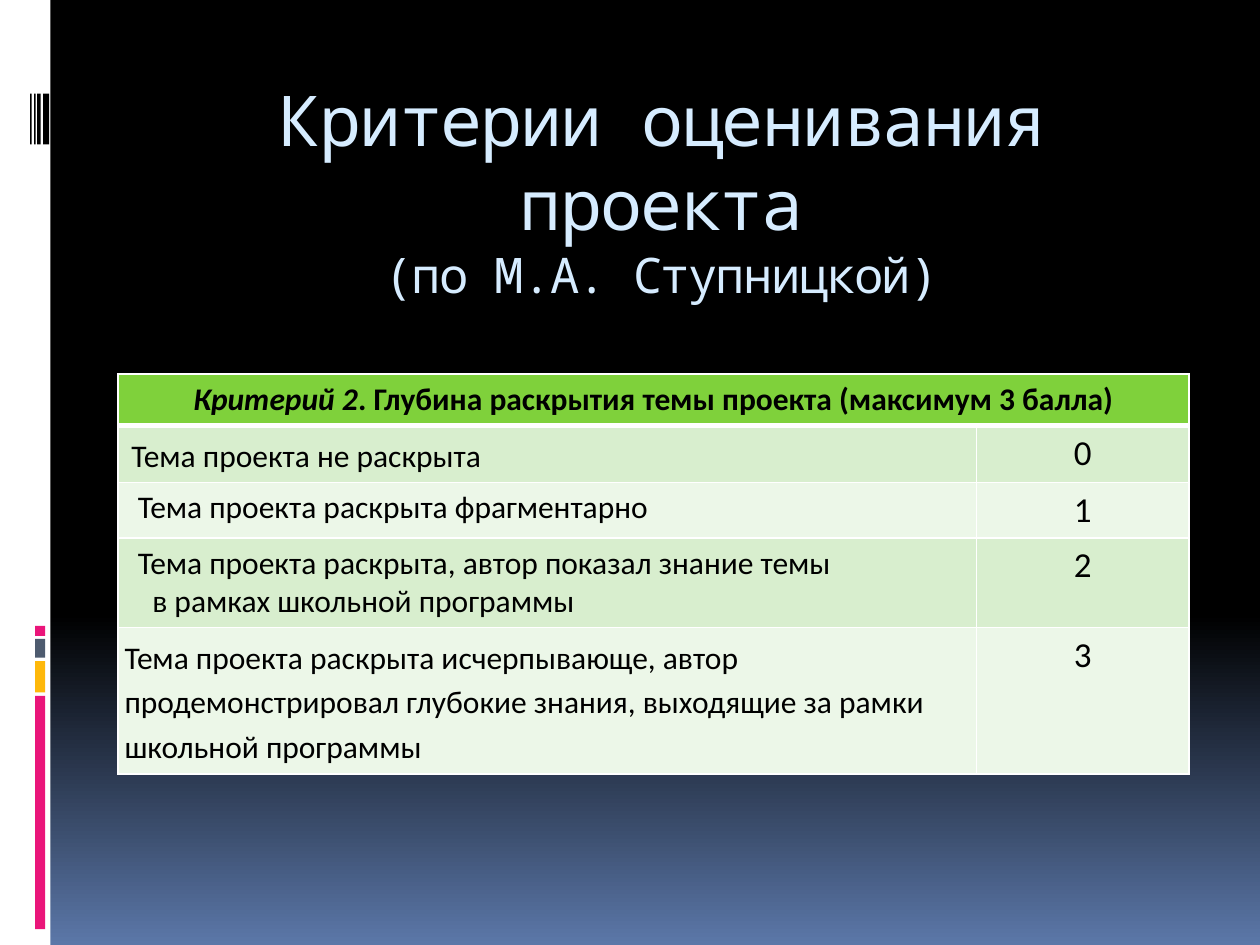
from lxml.etree import SubElement
from pptx import Presentation
from pptx.dml.color import RGBColor
from pptx.enum.shapes import MSO_SHAPE
from pptx.enum.text import MSO_ANCHOR, MSO_AUTO_SIZE, PP_ALIGN
from pptx.oxml.ns import qn
from pptx.util import Cm, Pt

THEME = {
    "white": "FFFFFF", "black": "000000", "pink": "EA157A", "gold": "FEB80A",
    "slate": "4E5B6F", "sky": "5B77A8", "pale": "D6ECFF", "green": "7FD13B",
    "bands": ("D8EECE", "ECF7E8"),
    "mono": "Noto Sans Mono", "sans": "Calibri",
    "title": 40, "sub": 28, "text": 18, "score": 20,
}

TITLE = ["Критерии оценивания проекта", "(по М.А. Ступницкой)"]
HEAD = ["Критерий 2", ". Глубина раскрытия темы проекта (максимум 3 балла)"]

# lines, score, left indents (cm), line spacing, row height (cm)
ROWS = [
    (["Тема проекта не раскрыта"], "0", [0.27], 1.15, 1.14),
    (["Тема проекта раскрыта фрагментарно"], "1", [0.4], 1, 1.12),
    (["Тема проекта раскрыта, автор показал знание темы",
      "в рамках школьной программы"], "2", [0.4, 0.69], 1, 1.79),
    (["Тема проекта раскрыта исчерпывающе, автор продемонстрировал "
      "глубокие знания, выходящие за рамки школьной программы"],
     "3", [0.13], 1.15, 2.95),
]
HEAD_HIGH = 1.04
COLS = [17.3, 4.29]

BARS = [
    (0, 0, 1.02, 19.05, "white"),
    (0.71, 14.03, 0.2, 4.7, "pink"),
    (0.71, 13.33, 0.2, 0.63, "gold"),
    (0.71, 12.88, 0.2, 0.38, "slate"),
    (0.71, 12.62, 0.2, 0.2, "pink"),
    (0.87, 1.89, 0.12, 1.02, "black"),
    (0.75, 1.89, 0.07, 1.02, "black"),
    (0.69, 1.89, 0.03, 1.02, "black"),
    (0.61, 1.89, 0.03, 1.02, "black"),
]


def color(name):
    return RGBColor.from_string(THEME[name])


def style(run, face, size, tone):
    run.font.name = THEME[face]
    run.font.size = Pt(THEME[size])
    run.font.color.rgb = color(tone)


def paint(slide):
    fill = slide.background.fill
    fill.gradient()
    fill.gradient_angle = 270
    for stop, (place, tone) in zip(fill.gradient_stops, [(0.65, "black"), (1, "sky")]):
        stop.position = place
        stop.color.rgb = color(tone)


def add_bars(slide):
    for left, top, wide, high, tone in BARS:
        bar = slide.shapes.add_shape(
            MSO_SHAPE.RECTANGLE, Cm(left), Cm(top), Cm(wide), Cm(high))
        bar.shadow.inherit = False
        bar.fill.solid()
        bar.fill.fore_color.rgb = color(tone)
        bar.line.fill.background()


def add_title(slide):
    title = slide.shapes.title
    title.left, title.top, title.width, title.height = Cm(2.54), Cm(1.42), Cm(21.59), Cm(2.54)
    frame = title.text_frame
    frame.auto_size = MSO_AUTO_SIZE.NONE
    frame.word_wrap = True
    frame.vertical_anchor = MSO_ANCHOR.TOP
    para = frame.paragraphs[0]
    para.text = "\v".join(TITLE)
    para.alignment = PP_ALIGN.CENTER
    for run, size in zip(para.runs, ["title", "sub"]):
        style(run, "mono", size, "pale")
        run.font._element.set("spc", "-100")


def dress(cell, tone, top=1, base=1):
    props = cell._tc.get_or_add_tcPr()
    for side, width in zip("LRTB", (1, 1, top, base)):
        line = SubElement(props, qn("a:ln" + side), w=str(Pt(width)))
        solid = SubElement(line, qn("a:solidFill"))
        SubElement(solid, qn("a:srgbClr"), val=THEME["white"])
    cell.fill.solid()
    cell.fill.fore_color.rgb = RGBColor.from_string(tone)


def add_table(slide):
    highs = [HEAD_HIGH] + [row[-1] for row in ROWS]
    table = slide.shapes.add_table(
        len(highs), len(COLS), Cm(2.38), Cm(7.54),
        Cm(sum(COLS)), Cm(sum(highs))).table
    table.first_row = table.horz_banding = False
    for col, wide in zip(table.columns, COLS):
        col.width = Cm(wide)
    for row, high in zip(table.rows, highs):
        row.height = Cm(high)

    head = table.cell(0, 0)
    head.merge(table.cell(0, 1))
    for cell in table.rows[0].cells:
        dress(cell, THEME["green"], base=3)
    para = head.text_frame.paragraphs[0]
    para.alignment = PP_ALIGN.CENTER
    for part, slant in zip(HEAD, [True, False]):
        run = para.add_run()
        run.text = part
        style(run, "sans", "text", "black")
        run.font.bold = True
        run.font.italic = slant

    for num, (lines, score, dents, space, high) in enumerate(ROWS):
        note, mark = table.rows[num + 1].cells
        for cell in (note, mark):
            dress(cell, THEME["bands"][num % 2], top=1 if num else 3)
        note.margin_left = 0
        note.margin_right = Cm(0.13)
        note.text_frame.text = "\n".join(lines)
        for para, dent in zip(note.text_frame.paragraphs, dents):
            para.line_spacing = space
            para._p.get_or_add_pPr().set("marL", str(Cm(dent)))
            style(para.runs[0], "sans", "text", "black")
        mark.text_frame.text = score
        para = mark.text_frame.paragraphs[0]
        para.alignment = PP_ALIGN.CENTER
        style(para.runs[0], "sans", "score", "black")


def main():
    deck = Presentation()
    deck.slide_width, deck.slide_height = Cm(25.4), Cm(19.05)
    slide = deck.slides.add_slide(deck.slide_layouts[5])
    paint(slide)
    add_bars(slide)
    add_title(slide)
    add_table(slide)
    deck.save("out.pptx")


if __name__ == "__main__":
    main()
